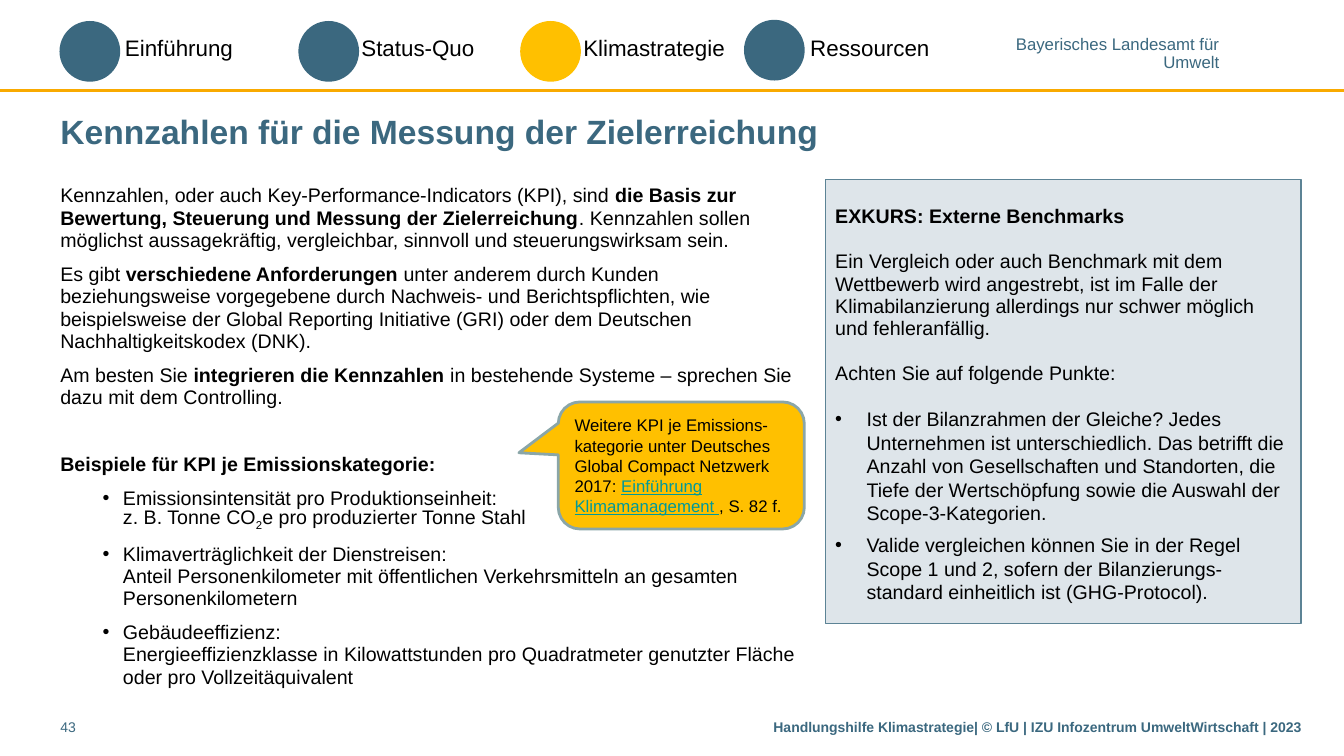
from lxml import etree
from pptx import Presentation
from pptx.dml.color import RGBColor
from pptx.enum import shapes, text
from pptx.oxml import ns
from pptx.util import Cm, Pt

BLUE = RGBColor(0x3B, 0x68, 0x7F)
YELLOW = RGBColor(0xFF, 0xC0, 0x00)
ORANGE = RGBColor(0xF9, 0xAA, 0x00)
PALE = RGBColor(0xDE, 0xE5, 0xEA)
PANEL_EDGE = RGBColor(0x5C, 0x83, 0x95)
CALLOUT_EDGE = RGBColor(0x8A, 0xA6, 0xA8)
TEAL = RGBColor(0x00, 0x99, 0x99)
BLACK = RGBColor(0, 0, 0)

LEFT = text.PP_ALIGN.LEFT
RIGHT = text.PP_ALIGN.RIGHT
TOP = text.MSO_ANCHOR.TOP
MIDDLE = text.MSO_ANCHOR.MIDDLE
PLAIN, BOLD, SUBSCRIPT, LINK = range(4)

# Chapter name, circle left and top, label left, circle colour
CHAPTERS = [
    ("Einführung", 1.5, 0.53, 2.9, BLUE),
    ("Status-Quo", 7.52, 0.53, 8.86, BLUE),
    ("Klimastrategie", 13.11, 0.53, 14.45, YELLOW),
    ("Ressourcen", 18.75, 0.5, 20.17, BLUE),
]

INTRO = [
    [("Kennzahlen, oder auch Key-Performance-Indicators (KPI), sind ", PLAIN),
     ("die Basis zur Bewertung, Steuerung und Messung der Zielerreichung", BOLD),
     (". Kennzahlen sollen möglichst aussagekräftig, vergleichbar, sinnvoll und "
      "steuerungswirksam sein.", PLAIN)],
    [("Es gibt ", PLAIN), ("verschiedene Anforderungen ", BOLD),
     ("unter anderem durch Kunden beziehungsweise vorgegebene durch Nachweis- und "
      "Berichtspflichten, wie beispielsweise der Global Reporting Initiative (GRI) "
      "oder dem Deutschen Nachhaltigkeitskodex (DNK).", PLAIN)],
    [("Am besten Sie ", PLAIN), ("integrieren die Kennzahlen", BOLD),
     (" in bestehende Systeme – sprechen Sie dazu mit dem Controlling.", PLAIN)],
]
EXAMPLES = [
    [("Emissionsintensität pro Produktionseinheit:\nz. B. Tonne CO", PLAIN),
     ("2", SUBSCRIPT), ("e pro produzierter Tonne Stahl", PLAIN)],
    [("Klimaverträglichkeit der Dienstreisen:\nAnteil Personenkilometer mit "
      "öffentlichen Verkehrsmitteln an gesamten Personenkilometern", PLAIN)],
    [("Gebäudeeffizienz:\nEnergieeffizienzklasse in Kilowattstunden pro Quadratmeter "
      "genutzter Fläche oder pro Vollzeitäquivalent", PLAIN)],
]
BENCHMARK_TEXT = [
    [("EXKURS: Externe Benchmarks", BOLD)],
    [("Ein Vergleich oder auch Benchmark mit dem Wettbewerb wird angestrebt, ist im "
      "Falle der Klimabilanzierung allerdings nur schwer möglich und fehleranfällig.",
      PLAIN)],
    [("Achten Sie auf folgende Punkte:", PLAIN)],
]
BENCHMARK_POINTS = [
    [("Ist der Bilanzrahmen der Gleiche? Jedes Unternehmen ist unterschiedlich. Das "
      "betrifft die Anzahl von Gesellschaften und Standorten, die Tiefe der "
      "Wertschöpfung sowie die Auswahl der Scope-3-Kategorien.", PLAIN)],
    [("Valide vergleichen können Sie in der Regel Scope 1 und 2, sofern der "
      "Bilanzierungs-standard einheitlich ist (GHG-Protocol).", PLAIN)],
]
CALLOUT = [
    ("Weitere KPI je Emissions-kategorie unter Deutsches Global Compact Netzwerk "
     "2017: ", PLAIN),
    ("Einführung Klimamanagement ", LINK), (", S. 82 f.", PLAIN)]


def set_frame(shape, side=0.25, top=0.13, anchor=TOP):
    frame = shape.text_frame
    frame.word_wrap = True
    frame.margin_left = frame.margin_right = Cm(side)
    frame.margin_top, frame.margin_bottom = Cm(top), Cm(0.13)
    frame.vertical_anchor = anchor
    return frame


def add_text_box(slide, left, top, width, height, side=0.25, inset=0.13):
    box = slide.shapes.add_textbox(Cm(left), Cm(top), Cm(width), Cm(height))
    return set_frame(box, side, inset)


def add_shape(slide, kind, box, fill, edge=None, weight=1):
    shape = slide.shapes.add_shape(kind, *map(Cm, box))
    shape.shadow.inherit = False
    shape.fill.solid()
    shape.fill.fore_color.rgb = fill
    if edge is None:
        shape.line.fill.background()
    else:
        shape.line.color.rgb = edge
        shape.line.width = Pt(weight)
    return shape


def add_bullet(paragraph, margin, hanging):
    properties = paragraph._p.get_or_add_pPr()
    properties.set("marL", str(Cm(margin)))
    properties.set("indent", str(-Cm(hanging)))
    etree.SubElement(properties, ns.qn("a:buFont")).set("typeface", "Arial")
    etree.SubElement(properties, ns.qn("a:buChar")).set("char", "•")


def add_run(paragraph, words, style):
    for number, line in enumerate(words.split("\n")):
        if number:
            paragraph.add_line_break()
        run = paragraph.add_run()
        run.text = line
        if style == BOLD:
            run.font.bold = True
        elif style == SUBSCRIPT:
            run.font._element.set("baseline", "-25000")
        elif style == LINK:
            run.font.underline = True
            run.font.color.rgb = TEAL


def add_paragraph(frame, runs, size=14, color=BLACK, align=LEFT, spacing=None,
                  before=0, after=0, bullet=None, bold=None):
    paragraph = frame.paragraphs[0]
    if paragraph.runs:
        paragraph = frame.add_paragraph()
        paragraph.space_before = Pt(before)
    paragraph.alignment = align
    paragraph.space_after = Pt(after)
    if spacing:
        paragraph.line_spacing = spacing
    if bullet:
        add_bullet(paragraph, *bullet)
    font = paragraph.font
    font.name, font.size, font.bold = "Arial", Pt(size), bold
    font.color.rgb = color
    for words, style in runs:
        add_run(paragraph, words, style)


def add_header(slide):
    rule = slide.shapes.add_connector(
        shapes.MSO_CONNECTOR.STRAIGHT, 0, Cm(2.28), Cm(33.87), Cm(2.28))
    rule.line.color.rgb = ORANGE
    rule.line.width = Pt(2)
    etree.SubElement(rule._element.spPr, ns.qn("a:effectLst"))
    for name, left, top, label_left, color in CHAPTERS:
        add_shape(slide, shapes.MSO_SHAPE.OVAL, (left, top, 1.53, 1.53), color)
        label = add_text_box(slide, label_left, 0.72, 4.2, 0.94)
        add_paragraph(label, [(name, PLAIN)], size=16)
    office = add_text_box(slide, 24.5, 0.94, 6.23, 0.86, side=0, inset=0)
    for line in ("Bayerisches Landesamt für", "Umwelt"):
        add_paragraph(office, [(line, PLAIN)], 12, BLUE, RIGHT, spacing=0.85)


def add_title(slide, words):
    title = slide.shapes.title
    title.left, title.top, title.width, title.height = map(Cm, (1.52, 2.59, 31.27, 1.4))
    frame = set_frame(title, side=0, anchor=MIDDLE)
    add_paragraph(frame, [(words, PLAIN)], 24, BLUE, bold=True)


def add_body(slide):
    frame = add_text_box(slide, 1.52, 4.52, 18.8, 13.06, side=0)
    for runs in INTRO:
        add_paragraph(frame, runs, spacing=Pt(16), before=8)
    add_paragraph(frame, [("Beispiele für KPI je Emissionskategorie:", BOLD)],
                  spacing=Pt(16), before=32)
    for runs in EXAMPLES:
        add_paragraph(frame, runs, spacing=Pt(16), before=8, bullet=(1.58, 0.51))


def add_benchmark_panel(slide):
    panel = add_shape(slide, shapes.MSO_SHAPE.RECTANGLE, (20.8, 4.52, 11.99, 11.2),
                      PALE, PANEL_EDGE)
    frame = set_frame(panel, top=0.66)
    for runs in BENCHMARK_TEXT:
        add_paragraph(frame, runs, spacing=Pt(16), before=16)
    for number, runs in enumerate(BENCHMARK_POINTS):
        add_paragraph(frame, runs, before=0 if number else 16, after=6,
                      bullet=(0.79, 0.79))


def add_callout(slide):
    callout = add_shape(slide, shapes.MSO_SHAPE.ROUNDED_RECTANGULAR_CALLOUT,
                        (14.07, 10.13, 6.2, 3.2), YELLOW, CALLOUT_EDGE, 2)
    for number, value in enumerate((-0.66, -0.1, 0.17)):
        callout.adjustments[number] = value
    add_paragraph(set_frame(callout, anchor=MIDDLE), CALLOUT, size=12)


def add_footer(slide):
    source = "Handlungshilfe Klimastrategie| © LfU | IZU Infozentrum UmweltWirtschaft | 2023"
    frame = add_text_box(slide, 15.04, 17.98, 17.75, 0.79, side=0)
    add_paragraph(frame, [(source, PLAIN)], 10, BLUE, RIGHT, bold=True)
    number = add_text_box(slide, 1.52, 17.98, 1.78, 0.79, side=0)
    add_paragraph(number, [("43", PLAIN)], 10, BLUE)


def main():
    presentation = Presentation()
    presentation.slide_width, presentation.slide_height = Cm(33.87), Cm(19.05)
    slide = presentation.slides.add_slide(presentation.slide_layouts[5])
    add_header(slide)
    add_title(slide, "Kennzahlen für die Messung der Zielerreichung")
    add_body(slide)
    add_footer(slide)
    add_benchmark_panel(slide)
    add_callout(slide)
    presentation.save("out.pptx")


if __name__ == "__main__":
    main()
